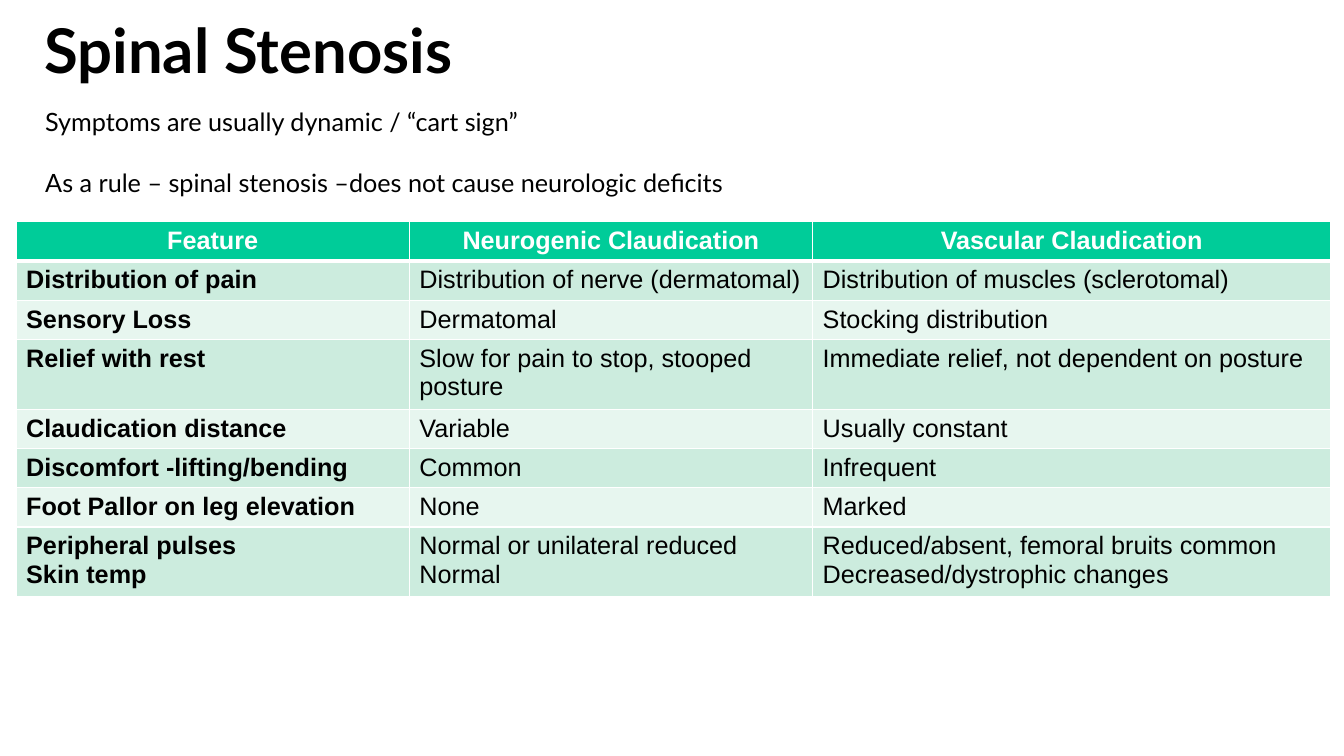
from lxml import etree
from pptx import Presentation
from pptx.dml.color import RGBColor
from pptx.enum.text import MSO_AUTO_SIZE, PP_ALIGN
from pptx.oxml.ns import qn
from pptx.util import Emu, Pt

CENTER, LEFT = PP_ALIGN.CENTER, PP_ALIGN.LEFT
GROW = MSO_AUTO_SIZE.SHAPE_TO_FIT_TEXT
EMU_PER_PX = 9144  # 100 px to the inch

COLUMN_WIDTHS = [390, 400, 514]
LINE_HEIGHT, ROW_PADDING = 30, 9
HEADINGS = ["Feature", "Neurogenic Claudication", "Vascular Claudication"]
COMPARISON = [
    ["Distribution of pain", "Distribution of nerve (dermatomal)",
     "Distribution of muscles (sclerotomal)"],
    ["Sensory Loss", "Dermatomal", "Stocking distribution"],
    ["Relief with rest", "Slow for pain to stop, stooped posture",
     "Immediate relief, not dependent on posture"],
    ["Claudication distance", "Variable", "Usually constant"],
    ["Discomfort -lifting/bending", "Common", "Infrequent"],
    ["Foot Pallor on leg elevation", "None", "Marked"],
    ["Peripheral pulses\nSkin temp", "Normal or unilateral reduced\nNormal",
     "Reduced/absent, femoral bruits common\nDecreased/dystrophic changes"],
]
TWO_LINE_ROWS = {3, 7}


def px(length):
    return Emu(length * EMU_PER_PX)


def color(hex_code):
    return RGBColor.from_string(hex_code)


class SlideBuilder:
    text_font, table_font = "Lato", "Arial"
    ink, paper = "000000", "FFFFFF"
    header_fill, band_fills = "00CC99", ["CCECDE", "E7F6EF"]

    def __init__(self, page):
        self.page = page

    def set_lines(self, frame, lines, font, size, hex_code, bold=False,
                  align=LEFT, gap=0):
        frame.text = "\n".join(lines)
        for index, para in enumerate(frame.paragraphs):
            para.alignment = align
            if gap and index:
                para.space_before = Pt(gap)
            para.font.name, para.font.size = font, Pt(size)
            para.font.bold = bold
            para.font.color.rgb = color(hex_code)

    def text(self, left, top, width, height, lines, size, bold=False, gap=0):
        box = self.page.shapes.add_textbox(px(left), px(top), px(width), px(height))
        box.text_frame.word_wrap = True
        box.text_frame.auto_size = GROW
        self.set_lines(box.text_frame, lines, self.text_font, size, self.ink,
                       bold, gap=gap)

    def borders(self, cell, top, bottom):
        properties = cell._tc.get_or_add_tcPr()
        for side, points in (("L", 1), ("R", 1), ("T", top), ("B", bottom)):
            line = etree.SubElement(properties, qn(f"a:ln{side}"), w=str(Pt(points)))
            fill = etree.SubElement(line, qn("a:solidFill"))
            etree.SubElement(fill, qn("a:srgbClr"), val=self.paper)

    def table(self, left, top, rows, widths, heights):
        frame = self.page.shapes.add_table(
            len(rows), len(widths), px(left), px(top),
            px(sum(widths)), px(sum(heights)))
        table = frame.table
        for column, width in zip(table.columns, widths):
            column.width = px(width)
        for r, (row, height) in enumerate(zip(rows, heights)):
            table.rows[r].height = px(height)
            header = r == 0
            background = self.header_fill if header else self.band_fills[(r - 1) % 2]
            for c, words in enumerate(row):
                cell = table.cell(r, c)
                # The rule under the header is heavier than the others
                self.borders(cell, 3 if r == 1 else 1, 3 if header else 1)
                cell.fill.solid()
                cell.fill.fore_color.rgb = color(background)
                self.set_lines(cell.text_frame, words.split("\n"), self.table_font,
                               18, self.paper if header else self.ink,
                               bold=header or c == 0,
                               align=CENTER if header else LEFT)


def main():
    deck = Presentation()
    deck.slide_width, deck.slide_height = px(1333), px(750)
    builder = SlideBuilder(deck.slides.add_slide(deck.slide_layouts[6]))

    # Comparison table
    rows = [HEADINGS] + COMPARISON
    heights = [ROW_PADDING + LINE_HEIGHT * (2 if r in TWO_LINE_ROWS else 1)
               for r in range(len(rows))]
    builder.table(16, 220, rows, COLUMN_WIDTHS, heights)

    # Title and introduction
    builder.text(34, 7, 1167, 84, ["Spinal Stenosis"], 44, bold=True)
    builder.text(35, 101, 1255, 101, [
        "Symptoms are usually dynamic / “cart sign”",
        "As a rule – spinal stenosis –does not cause neurologic deficits",
    ], 18, gap=21.6)

    deck.save("out.pptx")


if __name__ == "__main__":
    main()
